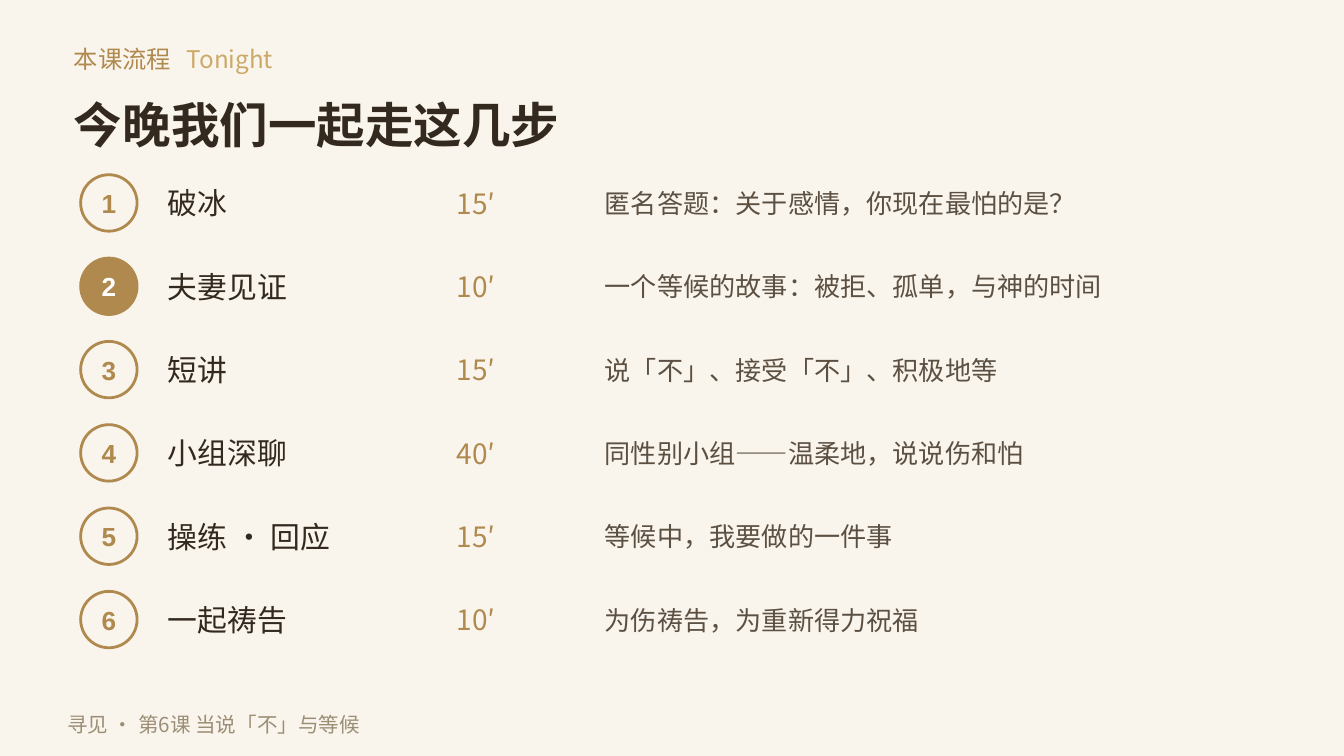
from lxml import etree
from pptx import Presentation
from pptx.dml.color import RGBColor
from pptx.enum.shapes import MSO_SHAPE
from pptx.enum.text import MSO_ANCHOR, MSO_AUTO_SIZE, PP_ALIGN
from pptx.oxml.ns import qn
from pptx.util import Inches, Pt

OVAL = MSO_SHAPE.OVAL
MIDDLE = MSO_ANCHOR.MIDDLE
NO_FIT = MSO_AUTO_SIZE.NONE
LEFT, CENTER = PP_ALIGN.LEFT, PP_ALIGN.CENTER

COL, ROW = Inches(0.05), Inches(0.02)
CJK, LATIN = "Noto Sans CJK SC", "Arial"
CREAM, WHITE, GOLD, PALE_GOLD = "FAF5EC", "FFFFFF", "B0894F", "CBA968"
INK, BROWN, MUTED = "33291E", "5C5043", "9C8E76"

FIRST_ROW, ROW_STEP, ROW_HEIGHT = 65, 31, 21
ACTIVE_STEP = 2
STEPS = [
    ("破冰", "15′", "匿名答题：关于感情，你现在最怕的是？"),
    ("夫妻见证", "10′", "一个等候的故事：被拒、孤单，与神的时间"),
    ("短讲", "15′", "说「不」、接受「不」、积极地等"),
    ("小组深聊", "40′", "同性别小组——温柔地，说说伤和怕"),
    ("操练 · 回应", "15′", "等候中，我要做的一件事"),
    ("一起祷告", "10′", "为伤祷告，为重新得力祝福"),
]
STEP_COLUMNS = [(25, 40, 16, INK), (68, 18, 15, GOLD), (90, 96, 14, BROWN)]


def rgb(value):
    """Turn a hex string into a colour."""
    return RGBColor.from_string(value)


class AgendaSlide:
    """Holds the style and the current slide, with lengths in grid columns and rows."""

    def __init__(self, prs):
        """Add a title-only slide with a cream background."""
        self.s = prs.slides.add_slide(prs.slide_layouts[5])
        self.s.background.fill.solid()
        self.s.background.fill.fore_color.rgb = rgb(CREAM)

    def box(self, x, y, w, h):
        """Convert grid units to slide lengths."""
        return int(x * COL), int(y * ROW), int(w * COL), int(h * ROW)

    def set_text(self, sp, runs, size, font=CJK, bold=False, align=LEFT, tab=None):
        """Fill a shape with one paragraph of (text, colour) runs."""
        tf = sp.text_frame
        tf.word_wrap = True
        tf.auto_size = NO_FIT
        tf.vertical_anchor = MIDDLE
        tf.margin_left = tf.margin_right = tf.margin_top = tf.margin_bottom = 0
        p = tf.paragraphs[0]
        p.alignment = align
        if tab:
            tabs = etree.SubElement(p._p.get_or_add_pPr(), qn("a:tabLst"))
            etree.SubElement(tabs, qn("a:tab"), pos=str(int(tab * COL)), algn="l")
        for text, color in runs:
            r = p.add_run()
            r.text = text
            r.font.size = Pt(size)
            r.font.bold = bold
            r.font.color.rgb = rgb(color)
            r.font.name = font
            etree.SubElement(r._r.get_or_add_rPr(), qn("a:ea"), typeface=font)

    def title(self, text, *place):
        """Move and format the title placeholder."""
        sp = self.s.shapes.title
        sp.left, sp.top, sp.width, sp.height = self.box(*place)
        self.set_text(sp, [(text, INK)], 26, bold=True)

    def text(self, runs, size, *place, tab=None):
        """Add a text box."""
        self.set_text(self.s.shapes.add_textbox(*self.box(*place)), runs, size, tab=tab)

    def badge(self, number, y, active):
        """Add a numbered circle, filled for the active step."""
        sp = self.s.shapes.add_shape(OVAL, *self.box(12, y, 8.4, ROW_HEIGHT))
        sp.shadow.inherit = False
        sp.fill.solid()
        sp.fill.fore_color.rgb = rgb(GOLD if active else CREAM)
        sp.line.color.rgb = rgb(GOLD)
        sp.line.width = Pt(1.5)
        color = WHITE if active else GOLD
        self.set_text(sp, [(str(number), color)], 14, LATIN, True, CENTER)

    def step(self, number, cells):
        """Add one agenda row: badge, name, minutes and description."""
        y = FIRST_ROW + (number - 1) * ROW_STEP
        self.badge(number, y, number == ACTIVE_STEP)
        for cell, (x, w, size, color) in zip(cells, STEP_COLUMNS):
            self.text([(cell, color)], size, x, y, w, ROW_HEIGHT)


def main():
    """Build the agenda and save it."""
    prs = Presentation()
    prs.slide_width = Inches(10)
    prs.slide_height = prs.slide_width * 9 // 16
    agenda = AgendaSlide(prs)
    agenda.text([("本课流程\t", GOLD), ("Tonight", PALE_GOLD)], 13, 11, 14, 170, 16, tab=16.8)
    agenda.title("今晚我们一起走这几步", 11, 35, 180, 22.5)
    for number, cells in enumerate(STEPS, 1):
        agenda.step(number, cells)
    agenda.text([("寻见 · 第6课 当说「不」与等候", MUTED)], 11, 10, 262.5, 150, 14)
    prs.save("out.pptx")


if __name__ == "__main__":
    main()
